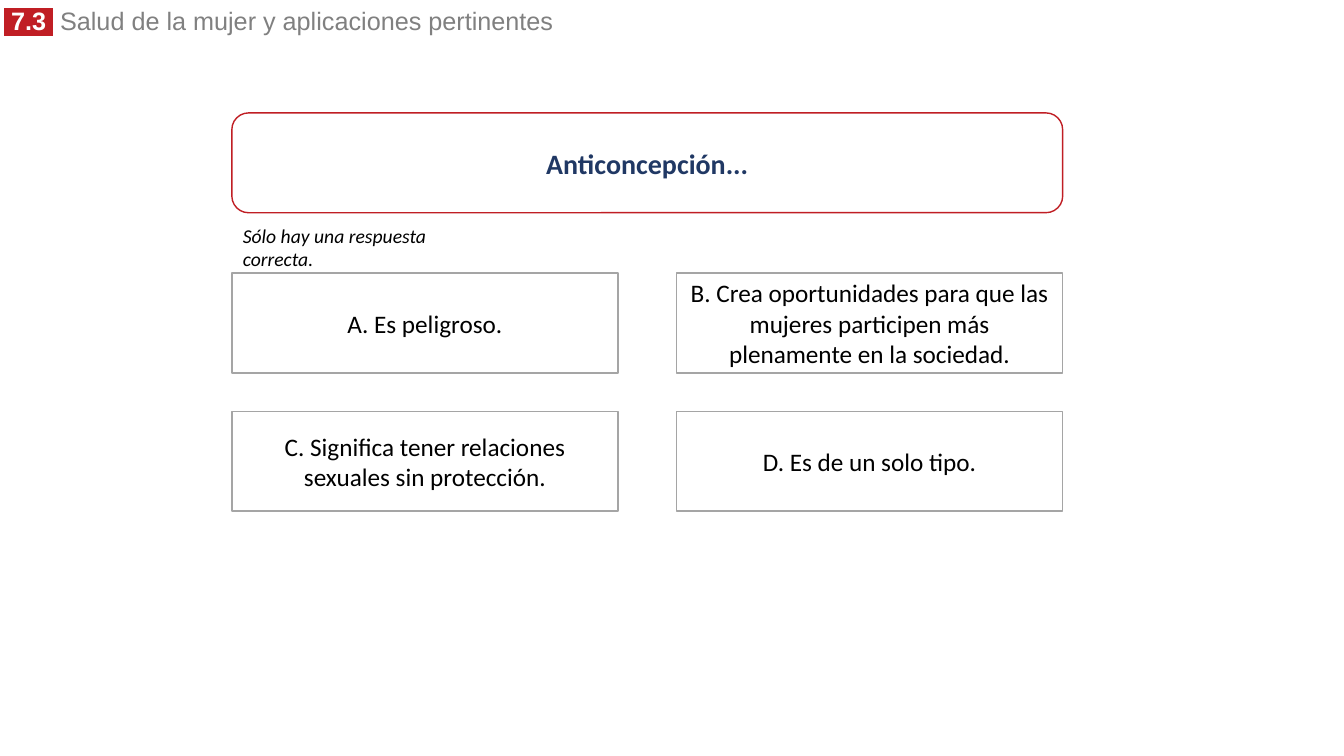
import pptx
import pptx.util
import pptx.dml.color
import pptx.enum.shapes
import pptx.enum.text
import pptx.oxml
import pptx.oxml.ns
from pptx.util import Inches

SECTION = " 7.3 "
HEADING = " Salud de la mujer y aplicaciones pertinentes"
QUESTION = "Anticoncepción..."
HINT = "Sólo hay una respuesta correcta."
ANSWERS = [
    "A. Es peligroso.",
    "B. Crea oportunidades para que las mujeres participen más plenamente en la sociedad.",
    "C. Significa tener relaciones sexuales sin protección.",
    "D. Es de un solo tipo.",
]

RED, GREY, NAVY, BLACK, WHITE = "C01E24", "808080", "203864", "000000", "FFFFFF"
BORDER = "A5A5A5"
LEFT, BOX_HEIGHT = 2.3, 0.99
ANSWER_WIDTH, ANSWER_TOP = 3.83, 2.71
COLUMN_STEP, ROW_STEP = 4.41, 1.37

SHAPES = pptx.enum.shapes.MSO_SHAPE
ALIGN = pptx.enum.text.PP_ALIGN
ANCHOR = pptx.enum.text.MSO_ANCHOR


def color(value):
    return pptx.dml.color.RGBColor.from_string(value)


def add_span(para, text, shade, size, name="Calibri", **styles):
    span = para.add_run()
    span.text = text
    span.font.color.rgb = color(shade)
    formats = {"size": pptx.util.Pt(size), "name": name, **styles}
    for key, value in formats.items():
        setattr(span.font, key, value)
    return span


def highlight(span, shade):
    mark = pptx.oxml.parse_xml(
        f'<a:highlight {pptx.oxml.ns.nsdecls("a")}><a:srgbClr val="{shade}"/></a:highlight>'
    )
    span.font._element.find(pptx.oxml.ns.qn("a:solidFill")).addnext(mark)


def add_box(page, kind, left, top, width, border):
    """Add a white outlined box and return its centred paragraph."""
    box = page.shapes.add_shape(
        kind, Inches(left), Inches(top), Inches(width), Inches(BOX_HEIGHT)
    )
    box.shadow.inherit = False
    box.fill.solid()
    box.fill.fore_color.rgb = color(WHITE)
    box.line.color.rgb = color(border)
    box.line.width = pptx.util.Pt(1)
    box.text_frame.word_wrap = True
    box.text_frame.vertical_anchor = ANCHOR.MIDDLE
    para = box.text_frame.paragraphs[0]
    para.alignment = ALIGN.CENTER
    return para


def main():
    deck = pptx.Presentation()
    deck.slide_width, deck.slide_height = Inches(13.33), Inches(7.5)
    page = deck.slides.add_slide(deck.slide_layouts[5])

    title = page.shapes.title
    title.left, title.top = Inches(-0.06), Inches(0.06)
    title.width, title.height = Inches(6.53), Inches(0.34)
    title.text_frame.vertical_anchor = ANCHOR.TOP
    title.text_frame.auto_size = pptx.enum.text.MSO_AUTO_SIZE.NONE
    para = title.text_frame.paragraphs[0]
    para.alignment = ALIGN.LEFT
    para.line_spacing = 0.8
    highlight(add_span(para, SECTION, WHITE, 18, "Arial", bold=True), RED)
    add_span(para, HEADING, GREY, 18, "Arial", bold=False)

    question_width = COLUMN_STEP + ANSWER_WIDTH
    para = add_box(page, SHAPES.ROUNDED_RECTANGLE, LEFT, 1.12, question_width, RED)
    add_span(para, QUESTION, NAVY, 20, bold=True)

    for index, answer in enumerate(ANSWERS):
        row, column = divmod(index, 2)
        left = LEFT + column * COLUMN_STEP
        top = ANSWER_TOP + row * ROW_STEP
        para = add_box(page, SHAPES.RECTANGLE, left, top, ANSWER_WIDTH, BORDER)
        add_span(para, answer, BLACK, 18)

    hint = page.shapes.add_textbox(Inches(2.31), Inches(2.17), Inches(2.36), Inches(0.34))
    hint.text_frame.word_wrap = True
    add_span(hint.text_frame.paragraphs[0], HINT, BLACK, 14, italic=True)

    deck.save("out.pptx")


if __name__ == "__main__":
    main()
